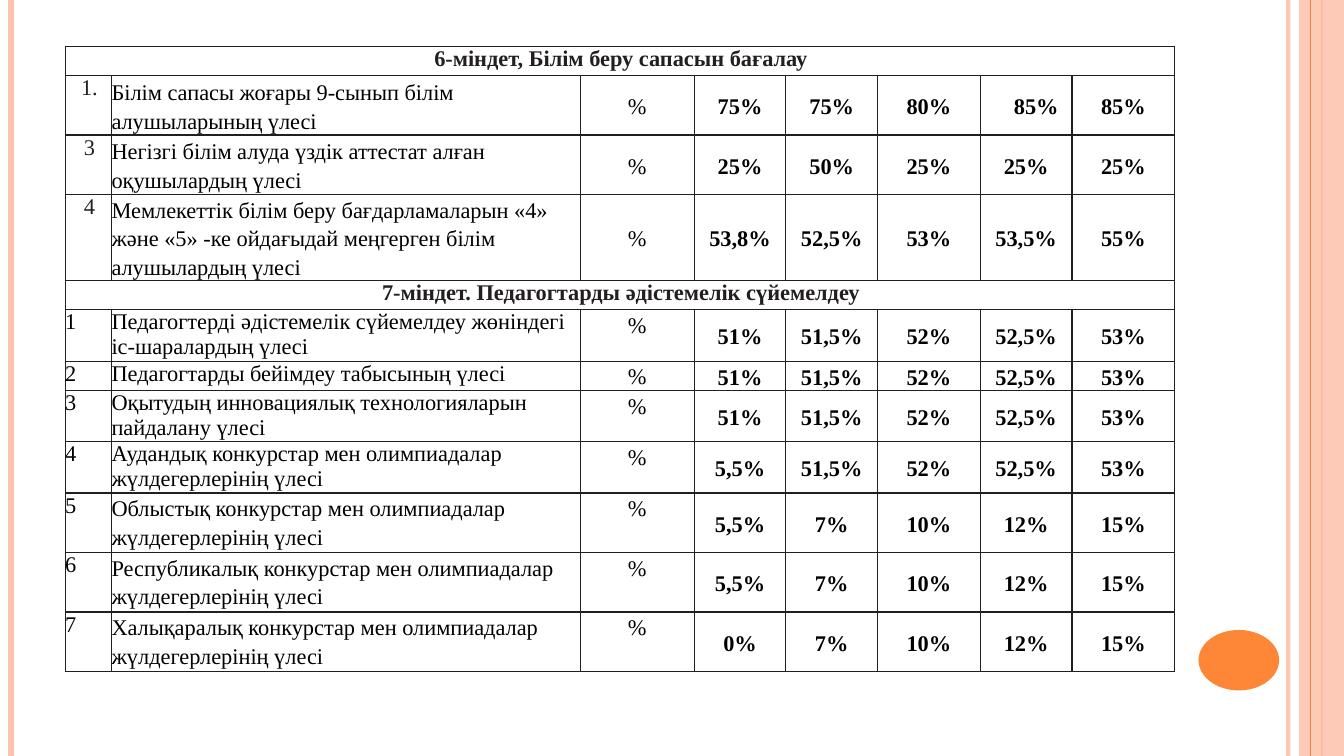
"""Build a slide with a table of education targets beside striped margins."""
from dataclasses import dataclass, replace

from lxml import etree
from pptx import Presentation, util as u
from pptx.dml.color import RGBColor
from pptx.enum import shapes, text
from pptx.oxml import ns

FONT, SIZE = "Times New Roman", 16
INK, BLACK, PEACH, ORANGE = "231F20", "000000", "FEC3AE", "FE8637"
COLS = [33.1, 334.8, 81.4, 65.5, 65.5, 73.4, 65.5, 73.4]
HEAD = 20.9


@dataclass
class Stripe:
    x: float
    color: str
    width: float
    alpha: int = 100


@dataclass
class Look:
    color: str = BLACK
    bold: bool = False
    center: bool = True
    middle: bool = False
    lead: float = 1.15
    before: float = 0
    indent: float = 0
    track: int = 0


@dataclass
class Goal:
    num: str
    label: str
    values: str
    high: float = 42.5
    lead: float = 1.15


@dataclass
class Task:
    title: str
    num: Look
    middle: bool
    goals: list[Goal]


TITLE = Look(INK, bold=True, lead=1, before=0.8, indent=1.4)
FIGURE = Look(bold=True, middle=True)
SHIFTED = replace(FIGURE, center=False, indent=24)

UNDER = [Stripe(920.2, PEACH, 3, 93), Stripe(7.9, PEACH, 4.5), Stripe(944, ORANGE, 1.5)]
OVER = Stripe(936, ORANGE, 0.75)

TASKS = [
    Task("6-міндет, Білім беру сапасын бағалау", replace(TITLE, bold=False, track=-20), True, [
        Goal("1.", "Білім сапасы жоғары 9-сынып білім алушыларының үлесі",
             "75% 75% 80% 85% 85%"),
        Goal("3", "Негізгі білім алуда үздік аттестат алған оқушылардың үлесі",
             "25% 50% 25% 25% 25%"),
        Goal("4", "Мемлекеттік білім беру бағдарламаларын «4» және «5» -ке ойдағыдай "
             "меңгерген білім алушылардың үлесі", "53,8% 52,5% 53% 53,5% 55%", 61.4),
    ]),
    Task("7-міндет. Педагогтарды әдістемелік сүйемелдеу", Look(center=False, lead=1), False, [
        Goal("1", "Педагогтерді әдістемелік сүйемелдеу жөніндегі іс-шаралардың үлесі",
             "51% 51,5% 52% 52,5% 53%", 36.7, 1),
        Goal("2", "Педагогтарды бейімдеу табысының үлесі",
             "51% 51,5% 52% 52,5% 53%", HEAD, 1),
        Goal("3", "Оқытудың инновациялық технологияларын пайдалану үлесі",
             "51% 51,5% 52% 52,5% 53%", 36.7, 1),
        Goal("4", "Аудандық конкурстар мен олимпиадалар жүлдегерлерінің үлесі",
             "5,5% 51,5% 52% 52,5% 53%", 36.7, 1),
        Goal("5", "Облыстық конкурстар мен олимпиадалар жүлдегерлерінің үлесі",
             "5,5% 7% 10% 12% 15%"),
        Goal("6", "Республикалық конкурстар мен олимпиадалар жүлдегерлерінің үлесі",
             "5,5% 7% 10% 12% 15%"),
        Goal("7", "Халықаралық конкурстар мен олимпиадалар жүлдегерлерінің үлесі",
             "0% 7% 10% 12% 15%"),
    ]),
]


def paint(fill, color: str) -> None:
    """Make a fill solid in a hex colour."""
    fill.solid()
    fill.fore_color.rgb = RGBColor.from_string(color)


def fade(shape, alpha: int) -> None:
    """Set the opacity of the first colour of a shape, in percent."""
    tint = next(shape.element.iter(ns.qn("a:srgbClr")))
    etree.SubElement(tint, ns.qn("a:alpha"), val=str(alpha * 1000))


def rule(slide, stripe: Stripe):
    """Draw a stripe from top to bottom."""
    x = u.Pt(stripe.x)
    line = slide.shapes.add_connector(shapes.MSO_CONNECTOR.STRAIGHT, x, u.Pt(0), x, u.Pt(540))
    paint(line.line.fill, stripe.color)
    line.line.width = u.Pt(stripe.width)
    if stripe.alpha < 100:
        fade(line, stripe.alpha)
    etree.SubElement(line.element.spPr, ns.qn("a:effectLst"))
    return line


def block(slide, kind, color: str, *box: float):
    """Draw a plain filled shape."""
    shape = slide.shapes.add_shape(kind, *map(u.Pt, box))
    shape.shadow.inherit = False
    paint(shape.fill, color)
    shape.line.fill.background()
    return shape


def frame(cell) -> None:
    """Give a cell thin borders, no fill and no margins."""
    props = cell._tc.get_or_add_tcPr()
    for side in "LRTB":
        edge = etree.SubElement(props, ns.qn(f"a:ln{side}"), w=str(u.Pt(1)))
        solid = etree.SubElement(edge, ns.qn("a:solidFill"))
        etree.SubElement(solid, ns.qn("a:srgbClr"), val=INK)
    cell.fill.background()
    cell.margin_left = cell.margin_right = cell.margin_top = cell.margin_bottom = u.Pt(0)


def write(cell, words: str, look: Look) -> None:
    """Write one styled run into a cell."""
    anchor = text.MSO_ANCHOR
    cell.vertical_anchor = anchor.MIDDLE if look.middle else anchor.TOP
    para = cell.text_frame.paragraphs[0]
    para.alignment = text.PP_ALIGN.CENTER if look.center else text.PP_ALIGN.LEFT
    para.line_spacing = look.lead
    para.space_before = u.Pt(look.before)
    para._p.get_or_add_pPr().set("marL", str(u.Pt(look.indent)))
    run = para.add_run()
    run.text = words
    run.font.name, run.font.size, run.font.bold = FONT, u.Pt(SIZE), look.bold
    paint(run.font.fill, look.color)
    if look.track:
        run._r.get_or_add_rPr().set("spc", str(look.track))


def fill_goal(row, goal: Goal, task: Task) -> None:
    """Fill one table row with a goal."""
    row.height = u.Pt(goal.high)
    unit = Look(middle=task.middle)
    write(row.cells[0], goal.num, task.num)
    write(row.cells[1], goal.label, replace(unit, center=False, lead=goal.lead))
    write(row.cells[2], "%", unit)
    for col, value in enumerate(goal.values.split(), 3):
        shifted = goal.num == "1." and col == 6
        write(row.cells[col], value, SHIFTED if shifted else FIGURE)


def add_grid(slide) -> None:
    """Draw the table of tasks and goals."""
    count = sum(1 + len(task.goals) for task in TASKS)
    high = sum(HEAD + sum(goal.high for goal in task.goals) for task in TASKS)
    grid = slide.shapes.add_table(count, len(COLS), u.Pt(46.6), u.Pt(33.1),
                                  u.Pt(sum(COLS)), u.Pt(high)).table
    grid.first_row = grid.horz_banding = False
    for col, wide in zip(grid.columns, COLS):
        col.width = u.Pt(wide)
    for cell in grid.iter_cells():
        frame(cell)
    rows = iter(grid.rows)
    for task in TASKS:
        head = next(rows)
        head.height = u.Pt(HEAD)
        head.cells[0].merge(head.cells[len(COLS) - 1])
        write(head.cells[0], task.title, TITLE)
        for goal in task.goals:
            fill_goal(next(rows), goal, task)


def main() -> None:
    """Build and save the slide."""
    deck = Presentation()
    deck.slide_width, deck.slide_height = u.Pt(960), u.Pt(540)
    slide = deck.slides.add_slide(deck.slide_layouts[6])
    lines = [rule(slide, stripe) for stripe in UNDER]
    band = block(slide, shapes.MSO_SHAPE.RECTANGLE, PEACH, 928, 0, 32, 540)
    fade(band, 87)
    lines[-1].begin_connect(band, 0)
    lines[-1].end_connect(band, 2)
    rule(slide, OVER)
    block(slide, shapes.MSO_SHAPE.OVAL, ORANGE, 856.1, 450, 57.6, 43.2)
    add_grid(slide)
    deck.save("out.pptx")


if __name__ == "__main__":
    main()
